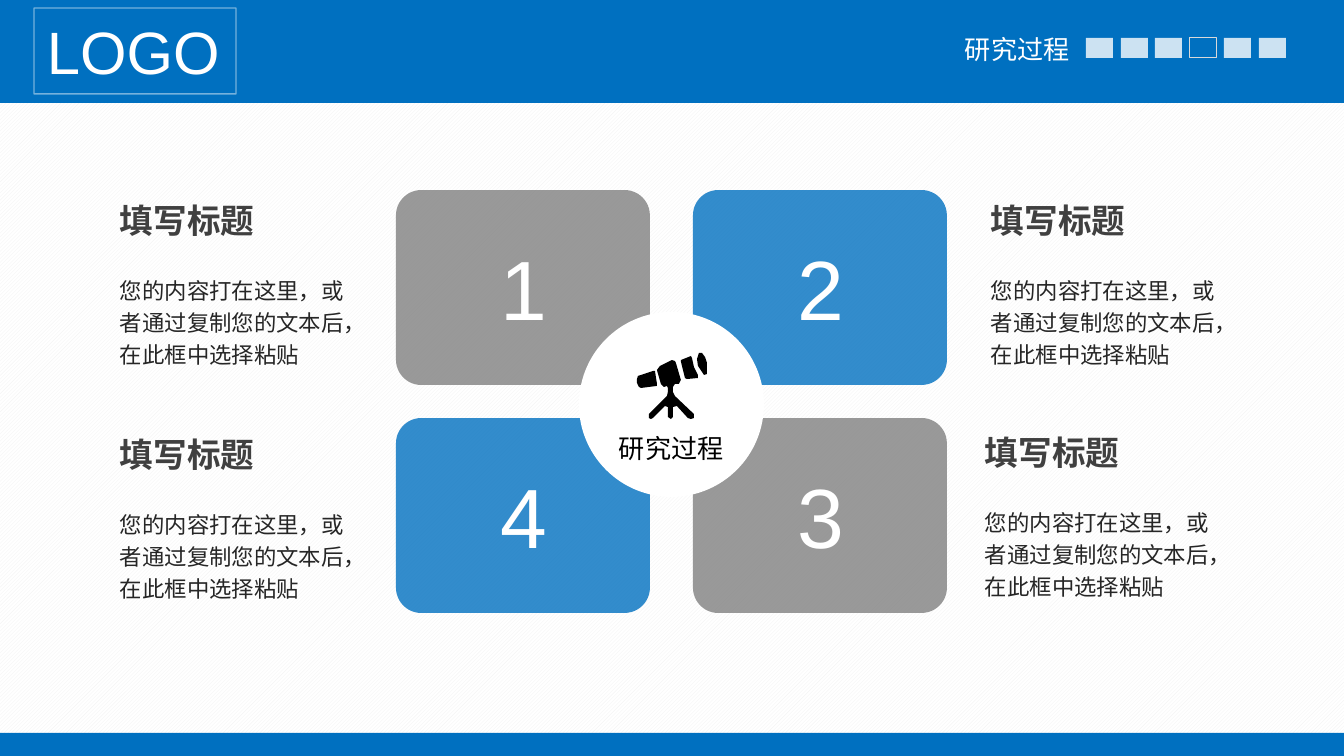
from lxml import etree
from pptx import Presentation
from pptx import util as u
from pptx.dml.color import RGBColor
from pptx.enum import dml, shapes, text
from pptx.oxml.ns import qn

SCALE = 914400 / 134.4
COLORS = {
    "blue": "0070C0", "gray": "808080", "white": "FFFFFF", "black": "000000",
    "border": "D9D9D9", "title": "404040", "body": "262626", "hatch": "F2F2F2",
}
LATIN, CJK = "Arial", "Noto Sans CJK SC"
RECT = shapes.MSO_SHAPE.RECTANGLE
ROUND = shapes.MSO_SHAPE.ROUNDED_RECTANGLE
OVAL = shapes.MSO_SHAPE.OVAL
TITLE = "填写标题"
BODY = "您的内容打在这里，或者通过复制您的文本后，在此框中选择粘贴"
TOPIC = "研究过程"
TELESCOPE = [
    [(691, 356), (681, 360), (681, 362), (685, 378), (687, 379), (698, 378),
     (698, 375), (694, 367), (692, 358)],
    [(702, 353), (699, 353), (697, 359), (698, 366), (702, 372), (704, 375),
     (707, 374), (707, 363), (705, 357)],
    [(641, 388), (657, 386), (657, 384), (655, 371), (653, 371), (638, 376),
     (637, 379), (637, 383), (639, 387)],
    [(688, 418), (691, 419), (694, 418), (694, 414), (675, 396), (673, 392),
     (673, 387), (675, 384), (679, 384), (681, 380), (676, 363), (675, 361),
     (672, 360), (660, 366), (657, 370), (661, 384), (664, 387), (667, 386),
     (668, 388), (668, 392), (667, 396), (649, 414), (649, 418), (651, 419),
     (653, 418), (665, 406), (668, 407), (668, 417), (671, 419), (673, 417),
     (673, 407), (677, 406)],
]


def px(n):
    return u.Emu(round(n * SCALE))


def rgb(name):
    return RGBColor.from_string(COLORS[name])


class Deck:
    def __init__(self, w, h):
        self.prs = Presentation()
        self.prs.slide_width, self.prs.slide_height = px(w), px(h)
        self.s = self.prs.slides.add_slide(self.prs.slide_layouts[6])

    def background(self, fore, back):
        fill = self.s.background.fill
        fill.patterned()
        fill.pattern = dml.MSO_PATTERN.LIGHT_UPWARD_DIAGONAL
        fill.fore_color.rgb, fill.back_color.rgb = rgb(fore), rgb(back)

    def paint(self, sp, fill=None, line=None, width=0.75, alpha=100):
        sp.shadow.inherit = False
        if fill:
            sp.fill.solid()
            sp.fill.fore_color.rgb = rgb(fill)
        else:
            sp.fill.background()
        if line:
            sp.line.color.rgb = rgb(line)
            sp.line.width = u.Pt(width)
        else:
            sp.line.fill.background()
        if alpha < 100:
            clr = sp._element.spPr.find(".//" + qn("a:srgbClr"))
            etree.SubElement(clr, qn("a:alpha"), val=str(alpha * 1000))
        return sp

    def shape(self, kind, x, y, w, h, **style):
        sp = self.s.shapes.add_shape(kind, px(x), px(y), px(w), px(h))
        return self.paint(sp, **style)

    def outline(self, points, fill):
        fb = self.s.shapes.build_freeform(*points[0], scale=SCALE)
        fb.add_line_segments(points[1:], close=True)
        return self.paint(fb.convert_to_shape(), fill)

    def set_text(self, sp, words, size, color="white", font=LATIN, bold=False,
                 align=text.PP_ALIGN.LEFT, spacing=None, wrap=True, inset=(13, 7)):
        tf = sp.text_frame
        tf.word_wrap = wrap
        tf.auto_size = text.MSO_AUTO_SIZE.SHAPE_TO_FIT_TEXT
        tf.vertical_anchor = text.MSO_ANCHOR.TOP
        tf.margin_left = tf.margin_right = px(inset[0])
        tf.margin_top = tf.margin_bottom = px(inset[1])
        p = tf.paragraphs[0]
        p.text, p.alignment = words, align
        if spacing:
            p.line_spacing = u.Pt(spacing)
        p.font.size, p.font.bold, p.font.name = u.Pt(size), bold, font
        p.font.color.rgb = rgb(color)

    def label(self, x, y, w, h, words, size, **style):
        sp = self.s.shapes.add_textbox(px(x), px(y), px(w), px(h))
        self.set_text(sp, words, size, **style)


def main():
    d = Deck(1344, 756)
    d.background("hatch", "white")

    d.shape(RECT, 0, 0, 1344, 103, fill="blue")
    d.label(952, 26, 134, 46, TOPIC, 14, font=CJK, wrap=False)
    for i in range(6):
        style = (dict(line="border", width=0.5) if i == 3
                 else dict(fill="white", alpha=80))
        d.shape(RECT, 1086 + round(34.6 * i), 38, 27, 20, **style)
    d.shape(RECT, 0, 733, 1344, 23, fill="blue")
    logo = d.shape(RECT, 34, 8, 202, 86, line="white", alpha=46)
    d.set_text(logo, "LOGO", 32, wrap=False)

    cards = [("1", 396, 190, "gray"), ("2", 693, 190, "blue"),
             ("4", 396, 418, "blue"), ("3", 693, 418, "gray")]
    for number, x, y, color in cards:
        card = d.shape(ROUND, x, y, 254, 195, fill=color, alpha=80)
        card.adjustments[0] = 0.13
        d.label(x + 46, y + 41, 163, 112, number, 45,
                align=text.PP_ALIGN.CENTER, inset=(9, 5))

    for x, y in [(107, 203), (107, 437), (978, 203), (972, 435)]:
        d.label(x, y + 62, 263, 110, BODY, 12, color="body", spacing=17.2)
        d.label(x, y, 207, 44, TITLE, 18, color="title", bold=True, spacing=16)

    d.shape(OVAL, 579, 312, 185, 185, fill="white")
    for points in TELESCOPE:
        d.outline(points, "black")
    d.label(610, 427, 126, 42, TOPIC, 14, color="black", wrap=False, inset=(9, 5))

    d.prs.save("out.pptx")


if __name__ == "__main__":
    main()
